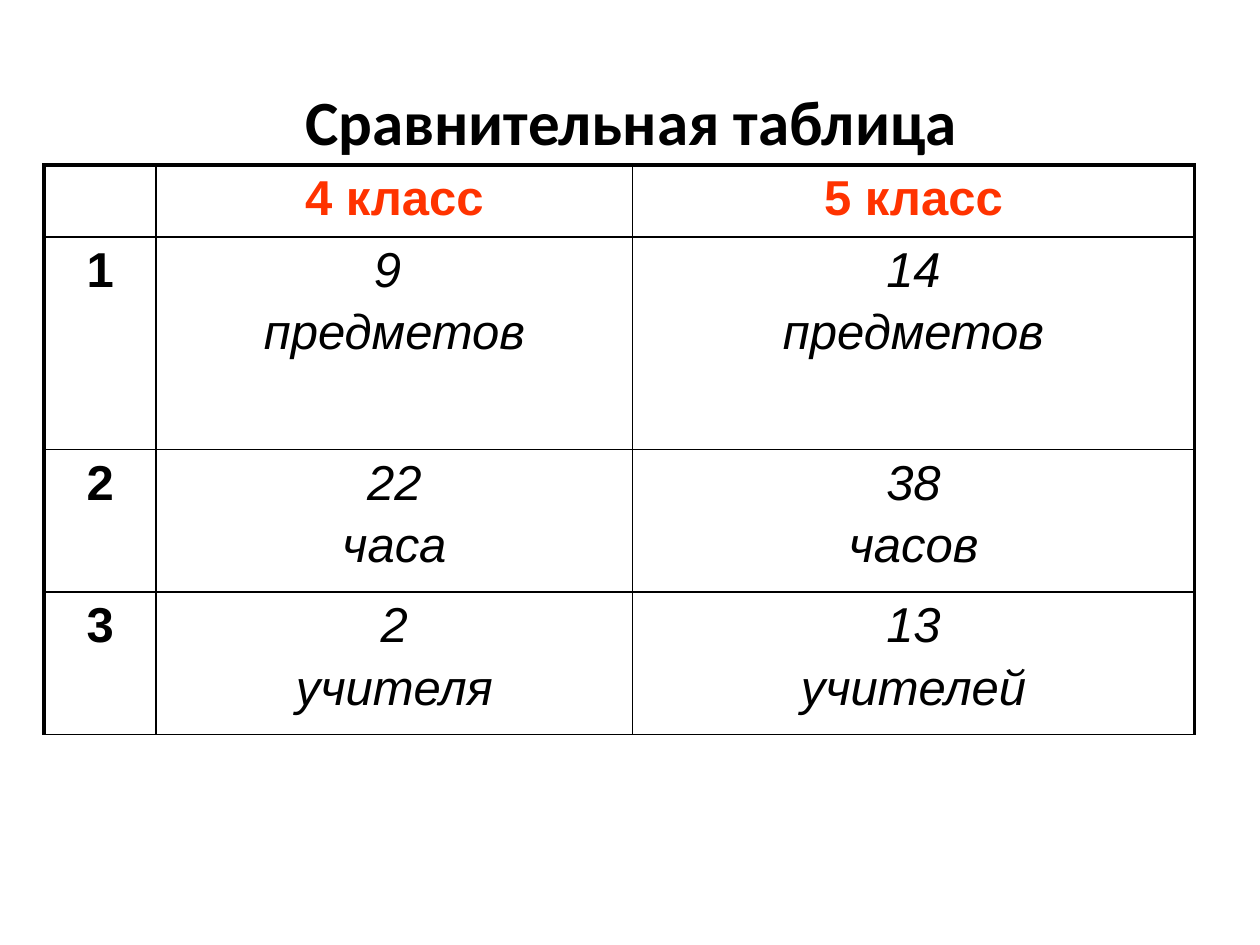
from lxml import etree
from pptx import Presentation
from pptx.dml.color import RGBColor
from pptx.enum.text import MSO_ANCHOR, PP_ALIGN
from pptx.oxml.ns import qn
from pptx.util import Inches, Pt

CENTER = PP_ALIGN.CENTER
MIDDLE = MSO_ANCHOR.MIDDLE
BLACK = RGBColor(0x00, 0x00, 0x00)
RED = RGBColor(0xFF, 0x33, 0x00)
THIN, THICK = Pt(1), Pt(2.25)

COL_WIDTHS = [0.89, 3.78, 4.46]
ROW_HEIGHTS = [0.57, 1.69, 1.13, 1.13]
ROWS = [
    ["", "4 класс", "5 класс"],
    ["1", "9 \nпредметов", "14\nпредметов"],
    ["2", " 22 \nчаса", "38\nчасов"],
    ["3", "2\nучителя", "13\nучителей"],
]


def set_borders(cell, **widths):
    tcPr = cell._tc.get_or_add_tcPr()
    for side, width in widths.items():
        ln = etree.SubElement(tcPr, qn(f"a:ln{side}"), w=str(width))
        fill = etree.SubElement(ln, qn("a:solidFill"))
        etree.SubElement(fill, qn("a:srgbClr"), val=str(BLACK))


def style_text(p, font_name, size, color, bold, italic=False):
    p.alignment = CENTER
    for r in p.runs:
        r.font.name = font_name
        r.font.size = Pt(size)
        r.font.color.rgb = color
        r.font.bold = bold
        r.font.italic = italic


prs = Presentation()
prs.slide_width, prs.slide_height = Inches(10), Inches(7.5)
s = prs.slides.add_slide(prs.slide_layouts[5])

title = s.shapes.title
title.left, title.top = Inches(0.51), Inches(0.44)
title.width, title.height = Inches(9), Inches(1.03)
tf = title.text_frame
tf.text = "Сравнительная таблица"
tf.vertical_anchor = MIDDLE
style_text(tf.paragraphs[0], "Calibri", 36, BLACK, bold=True)

table = s.shapes.add_table(
    len(ROWS), len(COL_WIDTHS), Inches(0.35), Inches(1.31),
    Inches(sum(COL_WIDTHS)), Inches(sum(ROW_HEIGHTS))).table
table.first_row = table.horz_banding = False
for column, width in zip(table.columns, COL_WIDTHS):
    column.width = Inches(width)
for row, height in zip(table.rows, ROW_HEIGHTS):
    row.height = Inches(height)

last_col = len(COL_WIDTHS) - 1
for i, row in enumerate(ROWS):
    for j, text in enumerate(row):
        cell = table.cell(i, j)
        set_borders(cell,
                    L=THICK if j == 0 else THIN,
                    R=THICK if j == last_col else THIN,
                    T=THICK if i == 0 else THIN,
                    B=THIN)
        cell.fill.background()
        cell.text_frame.text = text
        is_header = i == 0 or j == 0
        for n, p in enumerate(cell.text_frame.paragraphs):
            style_text(p, "Arial", 28, RED if i == 0 else BLACK,
                       bold=is_header, italic=not is_header)
            if n > 0:
                p.space_before = Pt(4.5)

prs.save("out.pptx")
